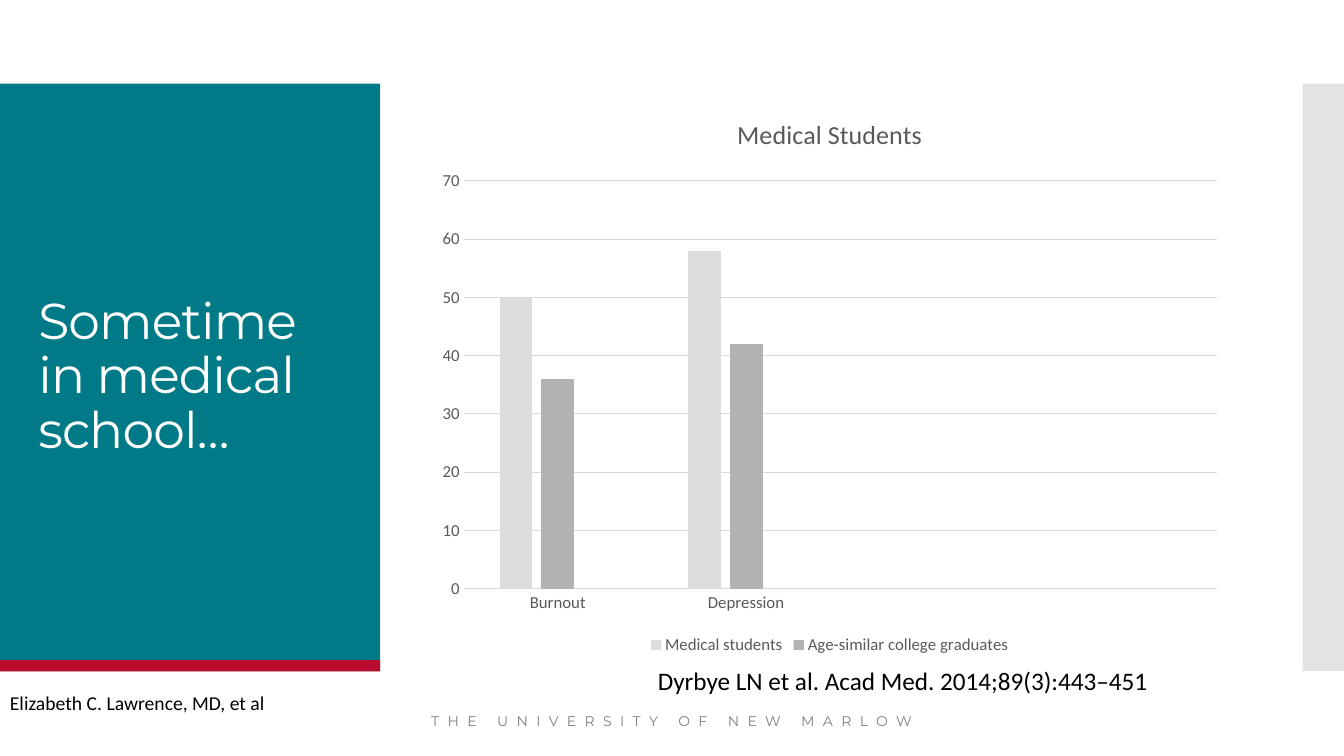
from lxml import etree
from pptx import Presentation
from pptx.chart import data
from pptx.dml.color import RGBColor
from pptx.enum import chart as kinds, shapes, text
from pptx.oxml import ns
from pptx.util import Inches, Pt

TEAL, RED, GRAY = "007A86", "BA0C2F", "C8C8C8"
LABEL_GRAY, GRID_GRAY = "595959", "D9D9D9"


def color(value):
    return RGBColor.from_string(value)


def write(box, words, size=14, font="Calibri", fill="000000", spacing=None,
          align=text.PP_ALIGN.LEFT, anchor=text.MSO_ANCHOR.TOP, wrap=True,
          fit=text.MSO_AUTO_SIZE.NONE, line_spacing=None):
    """Fill a box with one formatted paragraph; spacing is in points between letters."""
    frame = box.text_frame
    frame.word_wrap = wrap
    frame.auto_size = fit
    frame.vertical_anchor = anchor
    para = frame.paragraphs[0]
    para.alignment = align
    para.line_spacing = line_spacing
    span = para.add_run()
    span.text = words
    span.font.size = Pt(size)
    span.font.name = font
    span.font.color.rgb = color(fill)
    if spacing is not None:
        span._r.get_or_add_rPr().set("spc", str(round(spacing * 100)))


deck = Presentation()
deck.slide_width, deck.slide_height = Inches(13.33), Inches(7.5)
page = deck.slides.add_slide(deck.slide_layouts[5])

# Background panels
panels = [
    (0, 0.83, 3.77, 5.83, TEAL, None),
    (12.92, 0.83, 0.41, 5.83, GRAY, 50),
    (0, 6.55, 3.77, 0.11, RED, None),
]
for left, top, width, height, fill, opacity in panels:
    panel = page.shapes.add_shape(shapes.MSO_SHAPE.RECTANGLE, Inches(left),
                                  Inches(top), Inches(width), Inches(height))
    panel.shadow.inherit = False
    panel.fill.solid()
    panel.fill.fore_color.rgb = color(fill)
    panel.line.fill.background()
    if opacity is not None:
        tint = panel._element.spPr.find(".//" + ns.qn("a:srgbClr"))
        etree.SubElement(tint, ns.qn("a:alpha"), val=str(opacity * 1000))

# Title, raised above the panels
title = page.shapes.title
title.left, title.top = Inches(0.28), Inches(1.23)
title.width, title.height = Inches(3.22), Inches(5.03)
page.shapes._spTree.append(title._element)
write(title, "Sometime in medical school…", size=36, font="Montserrat",
      fill="FFFFFF", spacing=-0.6, anchor=text.MSO_ANCHOR.MIDDLE, line_spacing=0.9)

# Chart: two unnamed categories and an empty third series keep the bar spacing
survey = data.CategoryChartData()
survey.categories = ["Burnout", "Depression", "", ""]
survey.add_series("Medical students", (50, 58, None, None))
survey.add_series("Age-similar college graduates", (36, 42, None, None))
survey.add_series("Series 3", (None,) * 4)
chart = page.shapes.add_chart(kinds.XL_CHART_TYPE.COLUMN_CLUSTERED, Inches(4.23),
                              Inches(0.94), Inches(8), Inches(5.6), survey).chart
chart.font.name = "Calibri"
chart.font.size = Pt(12)
chart.font.color.rgb = color(LABEL_GRAY)

chart.has_title = True
chart.chart_title.include_in_layout = False
heading = chart.chart_title.text_frame.paragraphs[0].add_run()
heading.text = "Medical Students"
heading.font.size = Pt(18.6)
heading.font.bold = False
heading.font.name = "Calibri"
heading.font.color.rgb = color(LABEL_GRAY)

plot = chart.plots[0]
plot.gap_width, plot.overlap = 219, -27
plot.vary_by_categories = False
for series, fill in zip(plot.series, ("DDDDDD", "B2B2B2", "969696")):
    series.format.fill.solid()
    series.format.fill.fore_color.rgb = color(fill)

values, categories = chart.value_axis, chart.category_axis
values.minimum_scale, values.maximum_scale, values.major_unit = 0, 70, 10
values.format.line.fill.background()
for axis in (values, categories):
    axis.major_tick_mark = axis.minor_tick_mark = kinds.XL_TICK_MARK.NONE
for line in (values.major_gridlines.format.line, categories.format.line):
    line.color.rgb = color(GRID_GRAY)
    line.width = Pt(0.75)

chart.has_legend = True
chart.legend.position = kinds.XL_LEGEND_POSITION.BOTTOM
chart.legend.include_in_layout = False
hidden = etree.Element(ns.qn("c:legendEntry"))
etree.SubElement(hidden, ns.qn("c:idx"), val="2")
etree.SubElement(hidden, ns.qn("c:delete"), val="1")
chart.legend._element.find(ns.qn("c:legendPos")).addnext(hidden)

# Footer, citation and author
footer = page.shapes.add_textbox(Inches(3.43), Inches(6.95), Inches(6.46), Inches(0.4))
write(footer, "THE UNIVERSITY OF NEW MARLOW", size=10, font="Montserrat",
      fill="808080", spacing=6, align=text.PP_ALIGN.CENTER,
      anchor=text.MSO_ANCHOR.MIDDLE)

citation = page.shapes.add_textbox(Inches(6.38), Inches(6.55), Inches(5.16), Inches(0.4))
write(citation, "Dyrbye LN et al. Acad Med. 2014;89(3):443–451 ", size=18,
      align=text.PP_ALIGN.RIGHT, wrap=False, fit=text.MSO_AUTO_SIZE.SHAPE_TO_FIT_TEXT)

author = page.shapes.add_textbox(Inches(0), Inches(6.81), Inches(2.81), Inches(0.34))
write(author, "Elizabeth C. Lawrence, MD, et al", wrap=False,
      fit=text.MSO_AUTO_SIZE.SHAPE_TO_FIT_TEXT)

deck.save("out.pptx")
